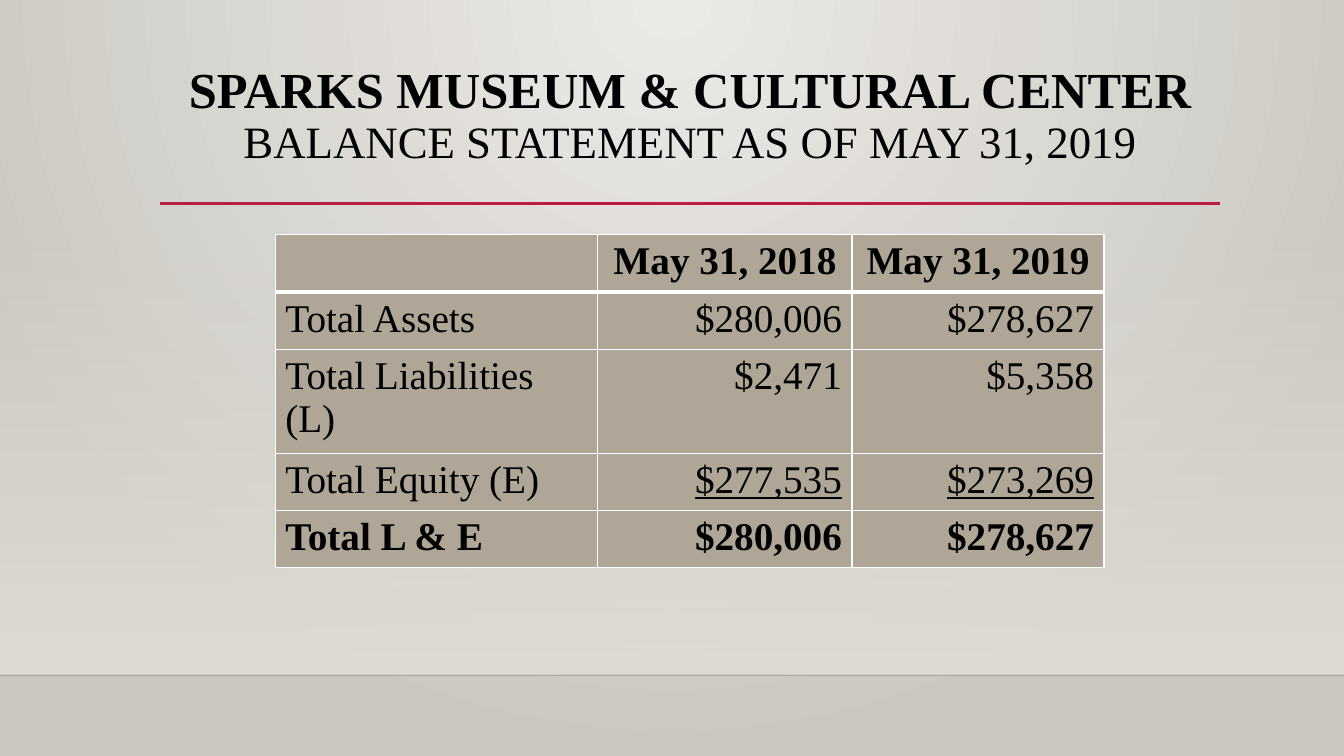
import pptx
import pptx.dml.color
import pptx.enum.shapes
import pptx.enum.text
import pptx.oxml
import pptx.oxml.ns
import pptx.oxml.xmlchemy
import pptx.util

INCH = pptx.util.Inches
ALIGN = pptx.enum.text.PP_ALIGN
WIDTH, HEIGHT = 13.33, 7.5
FLOOR = 6.7
LEFT, RIGHT = 1.59, 12.1
COLORS = {"glow": "ECEAE7", "edge": "CAC7C1", "haze": "DFDBD5", "floor": "000001",
          "rule": "B71E42", "cell": "B0A697", "border": "FFFFFF", "text": "000000"}


def rgb(name):
    return pptx.dml.color.RGBColor.from_string(COLORS[name])


def add_child(parent, tag, **attributes):
    child = pptx.oxml.xmlchemy.OxmlElement(tag)
    for key, value in attributes.items():
        child.set(key, str(value))
    parent.append(child)
    return child


deck = pptx.Presentation()
deck.slide_width, deck.slide_height = INCH(WIDTH), INCH(HEIGHT)
page = deck.slides.add_slide(deck.slide_layouts[6])
qn = pptx.oxml.ns.qn

# Background glow and the haze on the wall
haze = page.shapes.add_shape(pptx.enum.shapes.MSO_SHAPE.RECTANGLE,
                             0, INCH(2.21), INCH(WIDTH), INCH(FLOOR - 2.21))
haze.shadow.inherit = False
haze.line.fill.background()
for fill, names in ((page.background.fill, ("glow", "edge")), (haze.fill, ("haze", "haze"))):
    fill.gradient()
    for stop, name in zip(fill.gradient_stops, names):
        stop.color.rgb = rgb(name)
haze.fill.gradient_angle = 270
add_child(next(haze.element.iter(qn("a:srgbClr"))), "a:alpha", val=0)

glow = next(page.element.iter(qn("a:gradFill")))
glow.remove(glow.find(qn("a:lin")))
circle = add_child(glow, "a:path", path="circle")
add_child(circle, "a:fillToRect", l=43000, t=0, r=43000, b=100000)

# Floor edge and title rule
for name, start, end, y, weight, opacity in (("floor", 0, WIDTH, FLOOR, 1, 20),
                                             ("rule", LEFT, RIGHT, 2.02, 2.5, 100)):
    line = page.shapes.add_connector(pptx.enum.shapes.MSO_CONNECTOR.STRAIGHT,
                                     INCH(start), INCH(y), INCH(end), INCH(y))
    line.line.color.rgb = rgb(name)
    line.line.width = pptx.util.Pt(weight)
    add_child(next(line.element.iter(qn("a:srgbClr"))), "a:alpha", val=opacity * 1000)
    add_child(line.element.spPr, "a:effectLst")

# Title
box = page.shapes.add_textbox(INCH(LEFT), INCH(0.6), INCH(RIGHT - LEFT), INCH(1.6))
box.text_frame.word_wrap = True
para = box.text_frame.paragraphs[0]
para.alignment, para.line_spacing = ALIGN.CENTER, 0.9
for index, (text, size, bold) in enumerate((("SPARKS MUSEUM & CULTURAL CENTER", 36, True),
                                            ("BALANCE STATEMENT AS OF MAY 31, 2019", 32, False))):
    if index:
        para.add_line_break()
    span = para.add_run()
    span.text = text
    span.font.color.rgb = rgb("text")
    style = {"name": "Times New Roman", "size": pptx.util.Pt(size), "bold": bold}
    for key, value in style.items():
        setattr(span.font, key, value)

# Balance table
BALANCE = [("", "May 31, 2018", "May 31, 2019"),
           ("Total Assets", "$280,006", "$278,627"),
           ("Total Liabilities (L)", "$2,471", "$5,358"),
           ("Total Equity (E)", "$277,535", "$273,269"),
           ("Total L & E", "$280,006", "$278,627")]
COLUMNS = (3.2, 2.52, 2.5)
ROW = 0.41
last = len(BALANCE) - 1
table = page.shapes.add_table(len(BALANCE), len(COLUMNS), INCH(2.73), INCH(2.33),
                              INCH(sum(COLUMNS)), INCH(ROW * len(BALANCE))).table
table.horz_banding = False
for column, width in zip(table.columns, COLUMNS):
    column.width = INCH(width)

for r, values in enumerate(BALANCE):
    for c, text in enumerate(values):
        cell = table.cell(r, c)
        properties = cell._tc.get_or_add_tcPr()
        for side in "LRTB":
            heavy = (r, side) in ((0, "B"), (1, "T"))
            border = add_child(properties, f"a:ln{side}", w=pptx.util.Pt(3 if heavy else 1))
            add_child(add_child(border, "a:solidFill"), "a:srgbClr", val=COLORS["border"])
        cell.fill.solid()
        cell.fill.fore_color.rgb = rgb("cell")
        para = cell.text_frame.paragraphs[0]
        para.alignment = ALIGN.CENTER if r == 0 else ALIGN.RIGHT if c else ALIGN.LEFT
        if not text:
            continue
        span = para.add_run()
        span.text = text
        span.font.color.rgb = rgb("text")
        style = {"name": "Times New Roman", "size": pptx.util.Pt(28),
                 "bold": r in (0, last), "underline": r == last - 1 and c > 0}
        for key, value in style.items():
            setattr(span.font, key, value)

deck.save("out.pptx")
